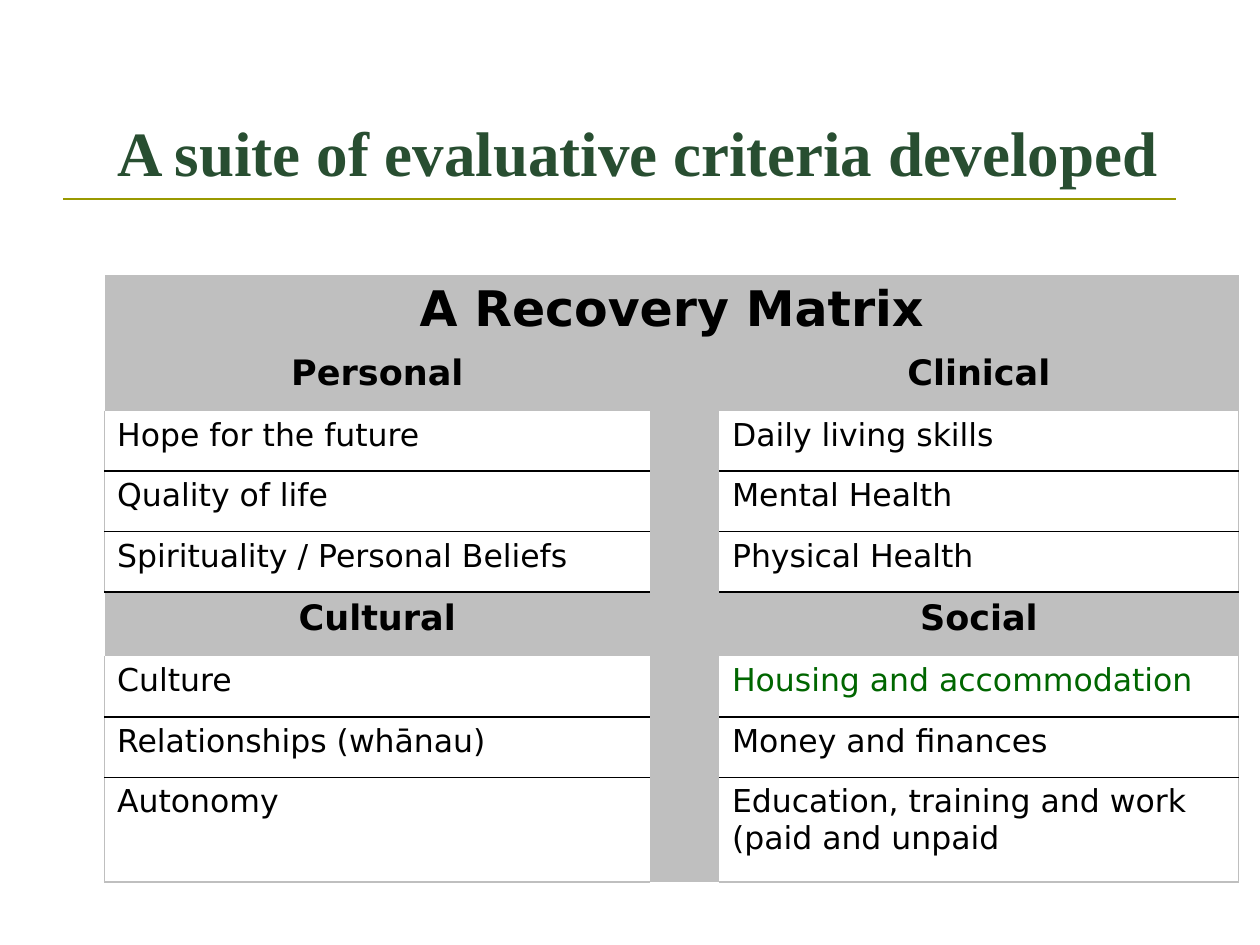
from lxml import etree
from pptx import Presentation
from pptx.dml.color import RGBColor
from pptx.enum.shapes import MSO_CONNECTOR
from pptx.enum.text import MSO_ANCHOR, PP_ALIGN
from pptx.oxml.ns import qn
from pptx.util import Inches, Pt

LEFT, CENTER = PP_ALIGN.LEFT, PP_ALIGN.CENTER
BOTTOM = MSO_ANCHOR.BOTTOM
STRAIGHT = MSO_CONNECTOR.STRAIGHT

BLACK = RGBColor(0x00, 0x00, 0x00)
GREY = RGBColor(0xBF, 0xBF, 0xBF)
DARK_GREEN = RGBColor(0x28, 0x4E, 0x31)
GREEN = RGBColor(0x00, 0x66, 0x00)
OLIVE = RGBColor(0x99, 0x99, 0x00)
TITLE_FONT, TABLE_FONT = "Times New Roman", "DejaVu Sans"
PLAIN_TABLE_STYLE = "{2D5ABB26-0587-4C30-8999-92F81FD0307C}"

# Content
TITLE = "A suite of evaluative criteria developed"
MATRIX_TITLE = "A Recovery Matrix"
BANDS = [
    (("Personal", "Clinical"), [
        ("Hope for the future", "Daily living skills"),
        ("Quality of life", "Mental Health"),
        ("Spirituality / Personal Beliefs", "Physical Health"),
    ]),
    (("Cultural", "Social"), [
        ("Culture", "Housing and accommodation"),
        ("Relationships (whānau)", "Money and finances"),
        ("Autonomy", "Education, training and work (paid and unpaid"),
    ]),
]
HIGHLIGHTED = "Housing and accommodation"

COLUMN_WIDTHS = [4.33, 0.55, 4.12]
TITLE_ROW, HEADING_ROW, ITEM_ROW, LAST_ROW = 0.57, 0.51, 0.48, 0.83
TEXT_COLUMNS = (0, 2)


def add_text(frame, text, font, size, color, bold, align):
    paragraph = frame.paragraphs[0]
    paragraph.alignment = align
    run = paragraph.add_run()
    run.text = text
    run.font.name, run.font.size, run.font.bold = font, Pt(size), bold
    run.font.color.rgb = color


def set_borders(cell, borders):
    properties = cell._tc.get_or_add_tcPr()
    for side in "LRTB":
        if side in borders:
            line = etree.SubElement(properties, qn(f"a:ln{side}"), w=str(Pt(1)))
            fill = etree.SubElement(line, qn("a:solidFill"))
            etree.SubElement(fill, qn("a:srgbClr"), val=str(borders[side]))


def shade(cell):
    cell.fill.solid()
    cell.fill.fore_color.rgb = GREY


prs = Presentation()
prs.slide_width, prs.slide_height = Inches(10), Inches(7.5)
slide = prs.slides.add_slide(prs.slide_layouts[5])

# Title and the rule under it
title = slide.shapes.title
title.left, title.top = Inches(0.83), Inches(0.3)
title.width, title.height = Inches(8.67), Inches(1.25)
title.text_frame.vertical_anchor = BOTTOM
title.text_frame.word_wrap = True
add_text(title.text_frame, TITLE, TITLE_FONT, 36, DARK_GREEN, True, LEFT)

rule = slide.shapes.add_connector(
    STRAIGHT, Inches(0.5), Inches(1.58), Inches(9.33), Inches(1.58))
rule.line.color.rgb = OLIVE
rule.line.width = Pt(1.5)
etree.SubElement(rule._element.spPr, qn("a:effectLst"))

# Row heights follow from the bands
heights = [TITLE_ROW]
for _, items in BANDS:
    heights += [HEADING_ROW] + [ITEM_ROW] * len(items)
heights[-1] = LAST_ROW

# Matrix
matrix_frame = slide.shapes.add_table(
    len(heights), len(COLUMN_WIDTHS), Inches(0.83), Inches(2.18),
    Inches(sum(COLUMN_WIDTHS)), Inches(sum(heights)))
matrix = matrix_frame.table
matrix._tbl.tblPr.find(qn("a:tableStyleId")).text = PLAIN_TABLE_STYLE
matrix.first_row = matrix.horz_banding = False
for column, width in zip(matrix.columns, COLUMN_WIDTHS):
    column.width = Inches(width)
for row, height in zip(matrix.rows, heights):
    row.height = Inches(height)

heading = matrix.cell(0, 0)
heading.merge(matrix.cell(0, 2))
shade(heading)
add_text(heading.text_frame, MATRIX_TITLE, TABLE_FONT, 28, BLACK, True, CENTER)

row = 1
for headings, items in BANDS:
    for column, text in zip(TEXT_COLUMNS, headings):
        cell = matrix.cell(row, column)
        shade(cell)
        add_text(cell.text_frame, text, TABLE_FONT, 20, BLACK, True, CENTER)
    shade(matrix.cell(row, 1))
    row += 1
    for index, pair in enumerate(items):
        shade(matrix.cell(row, 1))
        for column, outer_side, text in zip(TEXT_COLUMNS, "LR", pair):
            cell = matrix.cell(row, column)
            borders = {outer_side: GREY}
            if index > 0:
                borders["T"] = BLACK
            if index < len(items) - 1:
                borders["B"] = BLACK
            elif row == len(heights) - 1:
                borders["B"] = GREY
            set_borders(cell, borders)
            cell.fill.background()
            color = GREEN if text == HIGHLIGHTED else BLACK
            add_text(cell.text_frame, text, TABLE_FONT, 18, color, False, LEFT)
        row += 1

prs.save("out.pptx")
